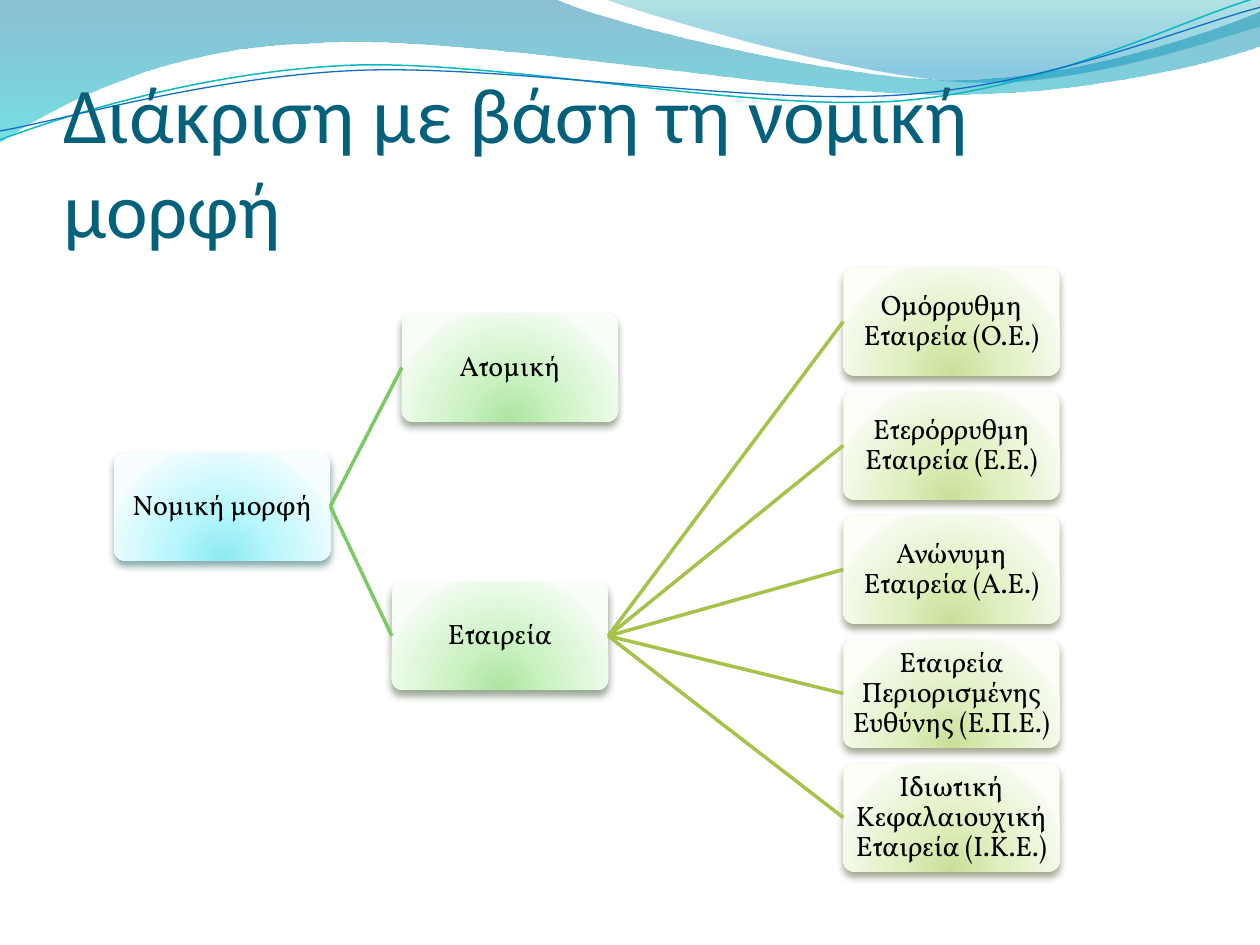
from lxml import etree
from pptx import Presentation, util as u
from pptx.dml.color import RGBColor
from pptx.enum import shapes, text
from pptx.oxml import parse_xml
from pptx.oxml.ns import nsdecls, qn

COLORS = {
    "title": "04617B", "label": "000000",
    "teal_line": "0AB8BF", "blue_line": "0F6FC6",
    "form_link": "7CCA62", "company_link": "A5C249",
}
# Box gradients from centre to rim, then the shadow
THEMES = {
    "root": (["8BE9F1", "B9F7FD", "EAFCFE", "F8FEFF"], "024B4E"),
    "form": (["ACE49F", "CDF3C4", "EFFBED", "F9FFF8"], "2B4821"),
    "company": (["C9DF97", "E0F0C1", "F5FAEC", "FCFEF8"], "3A4519"),
}
RADIAL = ('<a:path path="circle"><a:fillToRect l="50000" t="130000" '
          'r="50000" b="-30000"/></a:path>')
DOWNWARD = '<a:lin ang="5400000" scaled="1"/>'


def fill_gradient(shape, stops, direction):
    """Fill with (position %, colour, opacity %) stops."""
    marks = "".join(
        f'<a:gs pos="{pos * 1000}"><a:srgbClr val="{color}">'
        f'<a:alpha val="{opacity * 1000}"/></a:srgbClr></a:gs>'
        for pos, color, opacity in stops)
    shape.element.spPr.insert(2, parse_xml(
        f'<a:gradFill {nsdecls("a")} rotWithShape="1">'
        f'<a:gsLst>{marks}</a:gsLst>{direction}</a:gradFill>'))


def trace(start, segments, closed):
    """Outline in cm; a segment is one point (straight) or three (cubic)."""
    builder = slide.shapes.build_freeform(u.Cm(start[0]), u.Cm(start[1]))
    builder.add_line_segments([(u.Cm(x), u.Cm(y)) for segment in segments
                               for x, y in segment], close=closed)
    outline = builder.convert_to_shape()
    outline.shadow.inherit = False
    steps = iter(list(outline.element.spPr.iter(qn("a:lnTo"))))
    for segment in segments:
        first, *others = [next(steps) for _ in segment]
        if others:
            first.tag = qn("a:cubicBezTo")
        for step in others:
            first.append(step[0])
            step.getparent().remove(step)
    return outline


prs = Presentation()
prs.slide_width, prs.slide_height = u.Cm(25.4), u.Cm(19.05)
slide = prs.slides.add_slide(prs.slide_layouts[6])

# Waves across the top
bands = [
    ((0, 0), [
        [(11.18, -0.03)],
        [(12.09, 0.43), (16.87, 1.6), (19.25, 1.6)],
        [(21.67, 1.6), (24.33, 0.66), (25.4, 0.23)],
        [(25.43, 0.91)],
        [(24.97, 1.12), (22.1, 1.93), (18.95, 1.9)],
        [(15.8, 1.9), (9.7, 0.71), (6.53, 0.86)],
        [(3.28, 0.91), (1.17, 2.11), (-0.03, 2.87)],
        [(0, 0)],
    ], [(0, "0074A1", 45), (100, "00C6CF", 55)]),
    ((12.17, -0.03), [
        [(12.93, 0.28), (17.32, 1.57), (19.53, 1.65)],
        [(21.74, 1.75), (24.41, 0.81), (25.4, 0.53)],
        [(25.4, 0)],
        [(12.17, -0.03)],
    ], [(0, "00A1A9", 30), (80, "008BBF", 45)]),
]
for start, segments, stops in bands:
    band = trace(start, segments, True)
    fill_gradient(band, stops, DOWNWARD)
    band.line.fill.background()

strands = [
    ((-0.05, 2.22), [
        [(1.19, 1.82), (4.02, 1.04), (7.05, 1.05)],
        [(10.05, 1.07), (15.02, 2.37), (18.08, 2.29)],
        [(21.13, 2.2), (23.87, 0.91), (25.41, 0.55)],
    ], "teal_line", 0.85),
    ((-0.04, 2.04), [
        [(1.16, 1.9), (4.18, 1.15), (7.2, 1.16)],
        [(10.25, 1.18), (15.13, 2.25), (18.18, 2.17)],
        [(21.21, 2.1), (23.93, 1.06), (25.45, 0.75)],
    ], "blue_line", 0.75),
]
for start, segments, color, width in strands:
    strand = trace(start, segments, False)
    strand.rotation = 357.3
    strand.fill.background()
    strand.line.color.rgb = RGBColor.from_string(COLORS[color])
    strand.line.width = u.Pt(width)

# Title
title = slide.shapes.add_textbox(u.Cm(1.28), u.Cm(1.95), u.Cm(22.86), u.Cm(3.17))
title_format = {
    "word_wrap": True, "vertical_anchor": text.MSO_ANCHOR.BOTTOM,
    "margin_left": 0, "margin_right": 0, "margin_top": u.Cm(0.13), "margin_bottom": 0,
}
for name, value in title_format.items():
    setattr(title.text_frame, name, value)
heading = title.text_frame.paragraphs[0]
heading.text = "Διάκριση με βάση τη νομική μορφή"
heading.font.name, heading.font.size = "Calibri", u.Pt(45)
heading.font.color.rgb = RGBColor.from_string(COLORS["title"])

# Tree of legal forms: label, parent, theme, left, top
companies = [
    "Ομόρρυθμη Εταιρεία (Ο.Ε.)",
    "Ετερόρρυθμη Εταιρεία (Ε.Ε.)",
    "Ανώνυμη Εταιρεία (Α.Ε.)",
    "Εταιρεία Περιορισμένης Ευθύνης (Ε.Π.Ε.)",
    "Ιδιωτική Κεφαλαιουχική Εταιρεία (Ι.Κ.Ε.)",
]
tree = [
    ("Νομική μορφή", None, "root", 2.3, 9.12),
    ("Ατομική", "Νομική μορφή", "form", 8.1, 6.32),
    ("Εταιρεία", "Νομική μορφή", "form", 7.9, 11.73),
] + [(company, "Εταιρεία", "company", 17, 5.39 + 2.5 * row)
     for row, company in enumerate(companies)]
label_format = {
    "word_wrap": True, "vertical_anchor": text.MSO_ANCHOR.MIDDLE,
    **{f"margin_{side}": u.Cm(0.03) for side in ("left", "right", "top", "bottom")},
}
boxes = {}
for label, parent, theme, left, top in tree:
    box = slide.shapes.add_shape(shapes.MSO_SHAPE.ROUNDED_RECTANGLE,
                                 u.Cm(left), u.Cm(top), u.Cm(4.36), u.Cm(2.18))
    boxes[label] = box
    box.adjustments[0] = 0.1
    box.shadow.inherit = False
    shades, shadow_color = THEMES[theme]
    fill_gradient(box, [(pos, shade, 100) for pos, shade in zip((0, 43, 93, 100), shades)],
                  RADIAL)
    box.line.fill.background()
    box.element.spPr.find(qn("a:effectLst")).append(parse_xml(
        f'<a:outerShdw {nsdecls("a")} blurRad="{u.Pt(4.5)}" dist="{u.Pt(3)}" '
        f'dir="5400000" rotWithShape="0"><a:srgbClr val="{shadow_color}">'
        '<a:alpha val="48000"/></a:srgbClr></a:outerShdw>'))

    for name, value in label_format.items():
        setattr(box.text_frame, name, value)
    caption = box.text_frame.paragraphs[0]
    caption.text = label
    caption.alignment, caption.line_spacing = text.PP_ALIGN.CENTER, 0.9
    caption.font.name, caption.font.size = "Vollkorn", u.Pt(16)
    caption.font.color.rgb = RGBColor.from_string(COLORS["label"])

    if parent:
        link = slide.shapes.add_connector(shapes.MSO_CONNECTOR.STRAIGHT, 0, 0, 0, 0)
        link.begin_connect(boxes[parent], 3)
        link.end_connect(box, 1)
        link.line.color.rgb = RGBColor.from_string(COLORS[f"{theme}_link"])
        link.line.width = u.Pt(2)
        etree.SubElement(link.element.spPr, qn("a:effectLst"))

prs.save("out.pptx")
